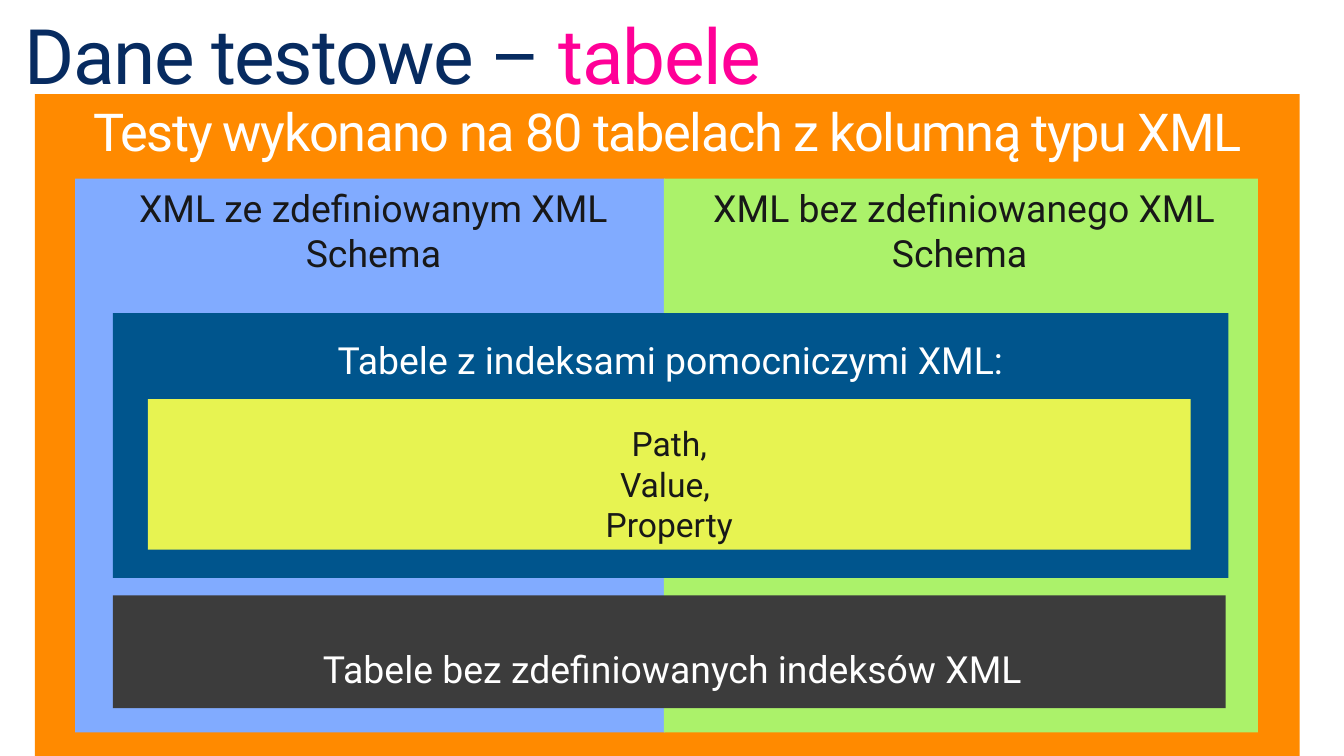
from pptx import Presentation
from pptx.dml.color import RGBColor
from pptx.enum.shapes import MSO_SHAPE
from pptx.enum.text import MSO_ANCHOR, PP_ALIGN
from pptx.util import Inches, Pt

FONT = "Roboto"
WHITE, INK = "FFFFFF", "181818"
TOP, BOTTOM = MSO_ANCHOR.TOP, MSO_ANCHOR.BOTTOM
TIGHT = (0.04, 0.04, 0.04, 0.04)
PANEL = (0.1, 0.05, 0.05, 0.1)
SPACING = -75

TITLE = [("Dane testowe – ", "072B60"), ("tabele", "FF0097")]
BOXES = [
    ((0.26, 0.7, 9.41, 4.93), "FF8A00", WHITE, 28, SPACING, TOP, TIGHT,
     ["Testy wykonano na 80 tabelach z kolumną typu XML"]),
    ((0.56, 1.33, 4.39, 4.12), "81ABFF", INK, 20, 0, TOP, PANEL,
     ["XML ze zdefiniowanym XML Schema"]),
    ((4.94, 1.33, 4.42, 4.12), "ABF26A", INK, 20, 0, TOP, PANEL,
     ["XML bez zdefiniowanego XML Schema "]),
    ((0.84, 4.43, 8.28, 0.84), "3C3C3C", WHITE, 20, 0, TOP, (0.1, 0.38, 0.05, 0.1),
     ["Tabele bez zdefiniowanych indeksów XML"]),
    ((0.84, 2.33, 8.3, 1.97), "00558D", WHITE, 20, 0, TOP, (0.05, 0.18, 0.05, 0.05),
     ["Tabele z indeksami pomocniczymi XML:"]),
    ((1.1, 2.97, 7.76, 1.12), "E7F351", INK, 18, 0, BOTTOM, TIGHT,
     ["Path,", "Value, ", "Property"]),
]


def rgb(color):
    return RGBColor.from_string(color)


def set_frame(tf, insets, anchor):
    tf.word_wrap = True
    tf.vertical_anchor = anchor
    tf.margin_left, tf.margin_top, tf.margin_right, tf.margin_bottom = map(Inches, insets)


def add_run(p, text, spacing):
    r = p.add_run()
    r.text = text
    if spacing:
        r.font._element.set("spc", str(spacing))
    return r


def set_font(font, size):
    font.name = FONT
    font.size = Pt(size)


def add_title(s):
    sp = s.shapes.title
    sp.left, sp.top, sp.width, sp.height = map(Inches, (0.18, 0.14, 9.15, 0.62))
    set_frame(sp.text_frame, (0, 0, 0, 0), TOP)
    p = sp.text_frame.paragraphs[0]
    p.alignment = PP_ALIGN.LEFT
    p.line_spacing = 0.9
    set_font(p.font, 41)
    for text, color in TITLE:
        add_run(p, text, SPACING).font.color.rgb = rgb(color)


def add_box(s, place, fill, color, size, spacing, anchor, insets, lines):
    sp = s.shapes.add_shape(MSO_SHAPE.RECTANGLE, *map(Inches, place))
    sp.shadow.inherit = False
    sp.fill.solid()
    sp.fill.fore_color.rgb = rgb(fill)
    sp.line.fill.background()
    tf = sp.text_frame
    set_frame(tf, insets, anchor)
    for i, line in enumerate(lines):
        p = tf.add_paragraph() if i else tf.paragraphs[0]
        p.alignment = PP_ALIGN.CENTER
        set_font(p.font, size)
        p.font.color.rgb = rgb(color)
        add_run(p, line, spacing)


prs = Presentation()
prs.slide_width = Inches(10)
prs.slide_height = prs.slide_width * 9 // 16
s = prs.slides.add_slide(prs.slide_layouts[5])
add_title(s)
for box in BOXES:
    add_box(s, *box)
prs.save("out.pptx")
